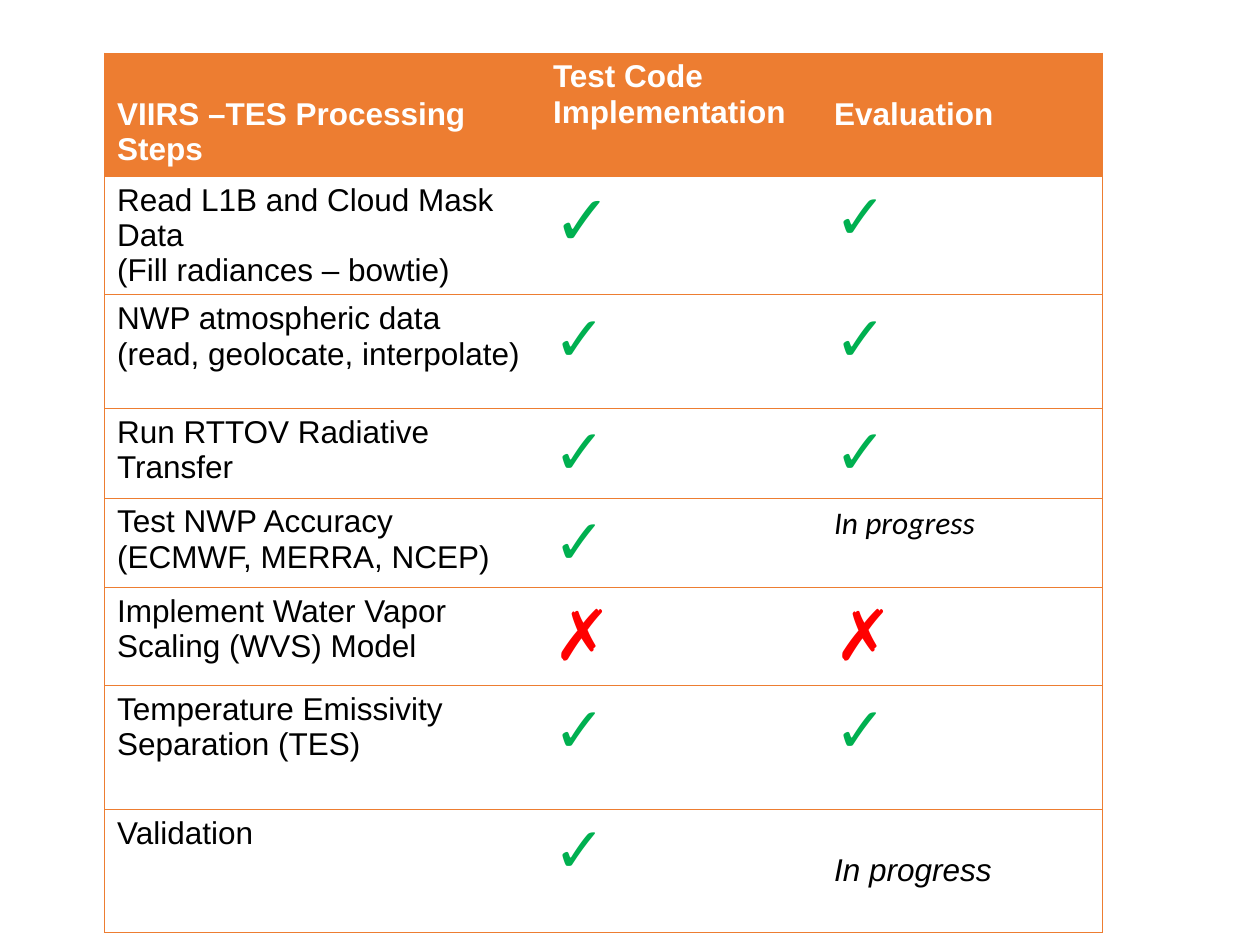
import pptx
import pptx.util
import pptx.dml.color
import pptx.oxml
import pptx.oxml.ns

Inches = pptx.util.Inches
Pt = pptx.util.Pt
RGBColor = pptx.dml.color.RGBColor

ORANGE = RGBColor(0xED, 0x7D, 0x31)
GREEN = RGBColor(0x00, 0xB0, 0x50)
RED = RGBColor(0xFF, 0x00, 0x00)
BLACK = RGBColor(0x00, 0x00, 0x00)
WHITE = RGBColor(0xFF, 0xFF, 0xFF)

DONE, OPEN, PROGRESS = "✓", "✗", "In progress"
MARK_COLORS = {DONE: GREEN, OPEN: RED}
COLUMNS = [3.46, 2.23, 2.23]
ROW_HEIGHTS = [0.98, 0.81, 0.9, 0.67, 0.67, 0.74, 0.98, 0.98]
LOWERED = Inches(0.35)

HEADER = ["VIIRS –TES Processing Steps", "Test Code Implementation", "Evaluation"]
STEPS = [
    ("Read L1B and Cloud Mask Data\n(Fill radiances – bowtie)", DONE, DONE),
    ("NWP atmospheric data\n(read, geolocate, interpolate)", DONE, DONE),
    ("Run RTTOV Radiative Transfer", DONE, DONE),
    ("Test NWP Accuracy\n(ECMWF, MERRA, NCEP)", DONE, PROGRESS),
    ("Implement Water Vapor Scaling (WVS) Model", OPEN, OPEN),
    ("Temperature Emissivity Separation (TES)", DONE, DONE),
    ("Validation", DONE, PROGRESS),
]


def set_borders(cell, visible):
    tc_pr = cell._tc.get_or_add_tcPr()
    for i, side in enumerate("LRTB"):
        fill = "<a:noFill/>"
        if side in visible:
            fill = f'<a:solidFill><a:srgbClr val="{ORANGE}"/></a:solidFill>'
        tc_pr.insert(i, pptx.oxml.parse_xml(
            f'<a:ln{side} {pptx.oxml.ns.nsdecls("a")} w="{Pt(0.5)}">{fill}</a:ln{side}>'))


def set_text(cell, text, size=18, color=BLACK, font="Arial", bold=False, italic=False):
    tf = cell.text_frame
    tf.text = text
    for p in tf.paragraphs:
        for r in p.runs:
            r.font.name = font
            r.font.size = Pt(size)
            r.font.bold = bold
            r.font.italic = italic
            r.font.color.rgb = color


def fill_header(cells):
    for cell, label in zip(cells, HEADER):
        set_text(cell, label, color=WHITE, bold=True)
        cell.fill.solid()
        cell.fill.fore_color.rgb = ORANGE
    cells[0].margin_top = cells[2].margin_top = LOWERED


def fill_step(cells, row, step):
    set_text(cells[0], step[0])
    for col, status in enumerate(step[1:], 1):
        font = "Arial" if row in (1, 7) else "Calibri"
        if status == PROGRESS:
            set_text(cells[col], status, font=font, italic=True)
        else:
            large = status == OPEN or (row, col) == (1, 1)
            set_text(cells[col], status, 40 if large else 36, MARK_COLORS[status], font)
    for cell in cells:
        cell.fill.background()


def add_status_table(s, left, top, width, height):
    frame = s.shapes.add_table(len(ROW_HEIGHTS), len(COLUMNS), left, top, width, height)
    table = frame.table
    table.horz_banding = False
    for column, share in zip(table.columns, COLUMNS):
        column.width = int(width * share / sum(COLUMNS))
    for row, row_height in zip(table.rows, ROW_HEIGHTS):
        row.height = Inches(row_height)
    frame.height = height
    fill_header(list(table.rows[0].cells))
    for i, step in enumerate(STEPS, 1):
        cells = list(table.rows[i].cells)
        fill_step(cells, i, step)
        if i == len(STEPS):
            cells[2].margin_top = LOWERED
    for row in table.rows:
        for cell, sides in zip(row.cells, ("LTB", "TB", "RTB")):
            set_borders(cell, sides)


def main():
    prs = pptx.Presentation()
    prs.slide_width, prs.slide_height = Inches(10), Inches(7.5)
    s = prs.slides.add_slide(prs.slide_layouts[6])
    add_status_table(s, Inches(0.83), Inches(0.42), Inches(7.92), Inches(6.88))
    prs.save("out.pptx")


if __name__ == "__main__":
    main()
